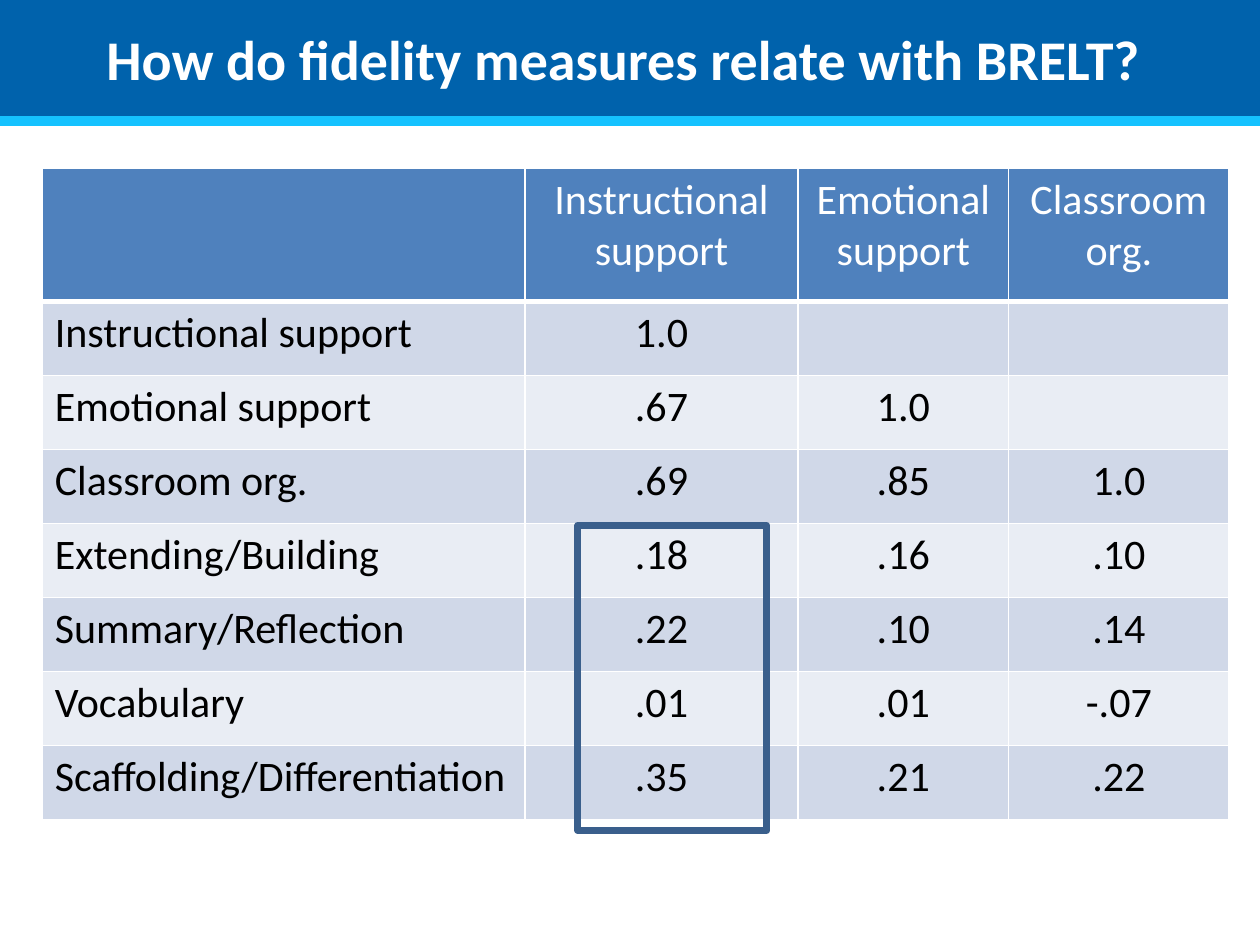
from collections import namedtuple
from dataclasses import dataclass

from lxml.etree import SubElement as Sub
from pptx import Presentation
from pptx.dml.color import RGBColor as Rgb
from pptx.enum.shapes import MSO_SHAPE as Kind
from pptx.enum.text import MSO_ANCHOR as Anchor, PP_ALIGN as Align
from pptx.oxml.ns import qn
from pptx.util import Cm, Pt

Box = namedtuple("Box", "x y w h")


@dataclass(frozen=True)
class Theme:
    font: str = "Calibri"
    white: str = "FFFFFF"
    black: str = "000000"
    navy: str = "0062AC"
    sky: str = "15C2FF"
    head: str = "4F81BD"
    bands: tuple = ("D0D8E8", "E9EDF4")
    frame: str = "3A5F8C"
    title: int = 32
    body: int = 24
    rule: int = 1
    thick: int = 3
    edge: int = 4


LOOK = Theme()
HEADS = ["", "Instructional support", "Emotional support", "Classroom org."]
ROWS = [
    ["Instructional support", "1.0", "", ""],
    ["Emotional support", ".67", "1.0", ""],
    ["Classroom org.", ".69", ".85", "1.0"],
    ["Extending/Building", ".18", ".16", ".10"],
    ["Summary/Reflection", ".22", ".10", ".14"],
    ["Vocabulary", ".01", ".01", "-.07"],
    ["Scaffolding/Differentiation", ".35", ".21", ".22"],
]
COLS = [9.73, 5.51, 4.24, 4.45]
TOP_ROW = 2.69


def write(frame, text, size=LOOK.body, color=LOOK.black, bold=False, align=Align.LEFT):
    para = frame.paragraphs[0]
    para.alignment = align
    run = para.add_run()
    run.text = text
    font = run.font
    font.name, font.size, font.bold = LOOK.font, Pt(size), bold
    font.color.rgb = Rgb.from_string(color)


def place(shape, box):
    shape.left, shape.top, shape.width, shape.height = map(Cm, box)


def add_rect(slide, box, fill=None, line=None):
    rect = slide.shapes.add_shape(Kind.RECTANGLE, *map(Cm, box))
    rect.shadow.inherit = False
    if fill:
        rect.fill.solid()
        rect.fill.fore_color.rgb = Rgb.from_string(fill)
    else:
        rect.fill.background()
    if line:
        rect.line.color.rgb = Rgb.from_string(line)
        rect.line.width = Pt(LOOK.edge)
    else:
        rect.line.fill.background()
    return rect


def add_rules(cell, base):
    props = cell._tc.get_or_add_tcPr()
    sides = [("a:lnL", LOOK.rule), ("a:lnR", LOOK.rule), ("a:lnT", LOOK.rule), ("a:lnB", base)]
    for side, width in sides:
        line = Sub(props, qn(side), w=str(Pt(width)))
        Sub(Sub(line, qn("a:solidFill")), qn("a:srgbClr"), val=LOOK.white)


def add_banner(slide, box):
    title = slide.shapes.title
    strip, lift = 0.2, 0.2
    bars = [
        (Box(box.x, box.y - lift, box.w, box.h + lift), LOOK.navy),
        (Box(box.x, box.y + box.h, box.w, strip), LOOK.sky),
    ]
    for area, fill in bars:
        title.element.addprevious(add_rect(slide, area, fill).element)
    place(title, box)
    title.text_frame.vertical_anchor = Anchor.MIDDLE
    write(title.text_frame, "How do fidelity measures relate with BRELT? ",
          size=LOOK.title, color=LOOK.white, bold=True, align=Align.CENTER)


def add_grid(slide, box):
    data = [HEADS] + ROWS
    table = slide.shapes.add_table(len(data), len(COLS), *map(Cm, box)).table
    for col, width in zip(table.columns, COLS):
        col.width = Cm(width)
    step = (box.h - TOP_ROW) / len(ROWS)
    for r, texts in enumerate(data):
        top = r == 0
        table.rows[r].height = Cm(TOP_ROW if top else step)
        fill = LOOK.head if top else LOOK.bands[(r - 1) % 2]
        for c, text in enumerate(texts):
            cell = table.cell(r, c)
            add_rules(cell, LOOK.thick if top else LOOK.rule)
            cell.fill.solid()
            cell.fill.fore_color.rgb = Rgb.from_string(fill)
            if text:
                write(cell.text_frame, text, color=LOOK.white if top else LOOK.black,
                      align=Align.CENTER if top or c else Align.LEFT)


def add_frame(slide, box):
    area = Box(box.x + 10.8, box.y + 7.2, 3.81, 6.15)
    add_rect(slide, area, line=LOOK.frame)


def main():
    deck = Presentation()
    deck.slide_width, deck.slide_height = Cm(25.4), Cm(19.05)
    slide = deck.slides.add_slide(deck.slide_layouts[5])
    grid = Box(0.85, 3.39, sum(COLS), 13.13)
    add_banner(slide, Box(0, 0, 25.4, 2.34))
    add_grid(slide, grid)
    add_frame(slide, grid)
    deck.save("out.pptx")


if __name__ == "__main__":
    main()
